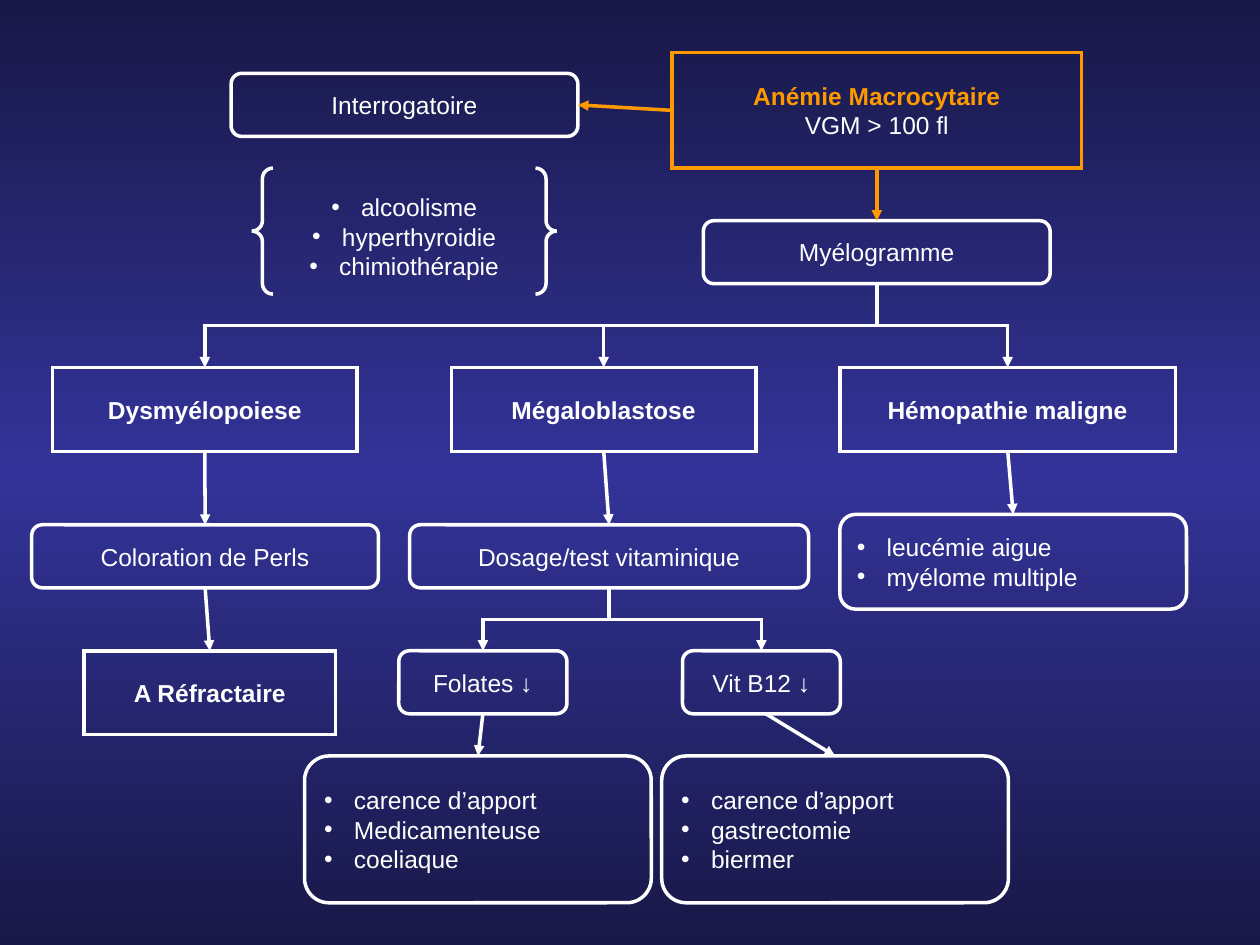
from copy import deepcopy

from lxml import etree
from pptx import Presentation
from pptx import util as u
from pptx.dml import color
from pptx.enum import shapes, text
from pptx.oxml import ns

WHITE, ORANGE = "FFFFFF", "FF9900"
NAVY, INDIGO = "181847", "333399"
TOP, LEFT, BOTTOM, RIGHT = range(4)
CENTER, START = text.PP_ALIGN.CENTER, text.PP_ALIGN.LEFT
RECT = shapes.MSO_SHAPE.RECTANGLE
ROUND = shapes.MSO_SHAPE.ROUNDED_RECTANGLE
BRACES = shapes.MSO_SHAPE.DOUBLE_BRACE
STRAIGHT, ELBOW = shapes.MSO_CONNECTOR.STRAIGHT, shapes.MSO_CONNECTOR.ELBOW
FRAME = {"word_wrap": True, "auto_size": text.MSO_AUTO_SIZE.NONE,
         "vertical_anchor": text.MSO_ANCHOR.MIDDLE}

STEPS = {
    "Myélogramme": (14.18, 4.45, 6.99),
    "Coloration de Perls": (0.64, 10.58, 6.99),
    "Dosage/test vitaminique": (8.26, 10.58, 8.04),
    "Interrogatoire": (4.66, 1.48, 6.99),
    "Folates ↓": (8.04, 13.12, 3.39),
    "Vit B12 ↓": (13.76, 13.12, 3.18),
}
DIAGNOSES = {
    "Dysmyélopoiese": (1.06, 7.41, 6.14),
    "Mégaloblastose": (9.1, 7.41, 6.14),
    "Hémopathie maligne": (16.93, 7.41, 6.77),
    "A Réfractaire": (1.69, 13.12, 5.08),
}
LISTS = {
    "history": (BRACES, (5.08, 3.39, 6.14, 2.54), CENTER,
                ["alcoolisme", "hyperthyroidie", "chimiothérapie"]),
    "folate causes": (ROUND, (6.14, 15.24, 6.99, 2.96), START,
                      ["carence d’apport", "Medicamenteuse", "coeliaque"]),
    "b12 causes": (ROUND, (13.34, 15.24, 6.99, 2.96), START,
                   ["carence d’apport", "gastrectomie", "biermer"]),
    "malignancies": (ROUND, (16.93, 10.37, 6.99, 1.91), START,
                     ["leucémie aigue", "myélome multiple"]),
}
ARROWS = [
    ("Dysmyélopoiese", "Coloration de Perls"),
    ("Coloration de Perls", "A Réfractaire"),
    ("Mégaloblastose", "Dosage/test vitaminique"),
    ("Folates ↓", "folate causes"),
    ("Hémopathie maligne", "malignancies"),
]
BRANCHES = {
    "Myélogramme": ["Hémopathie maligne", "Mégaloblastose", "Dysmyélopoiese"],
    "Dosage/test vitaminique": ["Folates ↓", "Vit B12 ↓"],
}


def set_all(obj, values):
    for name, value in values.items():
        setattr(obj, name, value)


def rgb(value):
    return color.RGBColor.from_string(value)


def add_child(parent, tag, **attrs):
    return etree.SubElement(parent, ns.qn(tag), attrs)


def set_background(slide):
    fill = slide.background.fill
    fill.gradient()
    fill.gradient_angle = 90
    stops = slide.element.find(".//" + ns.qn("a:gsLst"))
    stops.append(deepcopy(stops[0]))
    for stop, position, value in zip(fill.gradient_stops, (0, 0.5, 1), (NAVY, INDIGO, NAVY)):
        stop.position = position
        stop.color.rgb = rgb(value)


def outline(sp, value):
    sp.line.width = u.Pt(2)
    sp.line.color.rgb = rgb(value)
    ln = sp.element.spPr.find(ns.qn("a:ln"))
    add_child(ln, "a:miter", lim="800000")
    return ln


def write(tf, lines, align=CENTER, bullets=False):
    set_all(tf, FRAME)
    for i, (line, value, bold) in enumerate(lines):
        p = tf.add_paragraph() if i else tf.paragraphs[0]
        if bullets:
            pPr = p._p.get_or_add_pPr()
            indent = u.Cm(0.6)
            pPr.set("marL", str(indent))
            pPr.set("indent", str(-indent))
            add_child(pPr, "a:buFont", typeface="Arial")
            add_child(pPr, "a:buChar", char="•")
        p.alignment = align
        r = p.add_run()
        r.text = line
        set_all(r.font, {"name": "Arial", "size": u.Pt(14), "bold": bold})
        r.font.color.rgb = rgb(value)


def add_title(slide):
    sp = slide.shapes.title
    set_all(sp, dict(zip(("left", "top", "width", "height"),
                         map(u.Cm, (13.55, 1.06, 8.25, 2.33)))))
    outline(sp, ORANGE)
    write(sp.text_frame, [("Anémie Macrocytaire", ORANGE, True),
                          ("VGM > 100 fl", WHITE, False)])
    return sp


def add_box(slide, kind, place, lines, bold=False, align=CENTER, bullets=False):
    sp = slide.shapes.add_shape(kind, *map(u.Cm, place))
    sp.shadow.inherit = False
    sp.fill.background()
    outline(sp, WHITE)
    write(sp.text_frame, [(line, WHITE, bold) for line in lines], align, bullets)
    return sp


def finish_arrow(cxn, value):
    ln = outline(cxn, value)
    add_child(ln, "a:tailEnd", type="triangle")
    add_child(cxn.element.spPr, "a:effectLst")


def add_arrow(slide, source, target, value=WHITE, sides=(BOTTOM, TOP)):
    cxn = slide.shapes.add_connector(STRAIGHT, 0, 0, 0, 0)
    cxn.begin_connect(source, sides[0])
    cxn.end_connect(target, sides[1])
    finish_arrow(cxn, value)
    return cxn


def add_branch(slide, source, target):
    x1, y1 = source.left + source.width // 2, source.top + source.height
    x2, y2 = target.left + target.width // 2, target.top
    cx, cy = (x1 + x2) // 2, (y1 + y2) // 2
    half_drop, half_run = (y2 - y1) // 2, abs(x2 - x1) // 2
    rightward = x2 > x1
    ends = [cx - half_drop, cx + half_drop]
    if rightward:
        ends.reverse()
    cxn = slide.shapes.add_connector(ELBOW, ends[0], cy - half_run, ends[1], cy + half_run)
    cxn.element.spPr.find(ns.qn("a:xfrm")).set("rot", str((270 if rightward else 90) * 60000))
    finish_arrow(cxn, WHITE)


def main():
    prs = Presentation()
    set_all(prs, {"slide_width": u.Cm(25.4), "slide_height": u.Cm(19.05)})
    slide = prs.slides.add_slide(prs.slide_layouts[5])
    set_background(slide)
    title = add_title(slide)

    boxes = {}
    for name, place in STEPS.items():
        boxes[name] = add_box(slide, ROUND, (*place, 1.27), [name])
    for name, place in DIAGNOSES.items():
        boxes[name] = add_box(slide, RECT, (*place, 1.69), [name], bold=True)
    for name, (kind, place, align, lines) in LISTS.items():
        boxes[name] = add_box(slide, kind, place, lines, align=align, bullets=True)

    add_arrow(slide, title, boxes["Myélogramme"], ORANGE)
    add_arrow(slide, title, boxes["Interrogatoire"], ORANGE, (LEFT, RIGHT))
    for source, target in ARROWS:
        add_arrow(slide, boxes[source], boxes[target])
    for source, targets in BRANCHES.items():
        for target in targets:
            add_branch(slide, boxes[source], boxes[target])

    b12 = slide.shapes.add_connector(STRAIGHT, u.Cm(15.44), u.Cm(14.39), 0, 0)
    b12.end_connect(boxes["b12 causes"], TOP)
    finish_arrow(b12, WHITE)
    prs.save("out.pptx")


if __name__ == "__main__":
    main()
